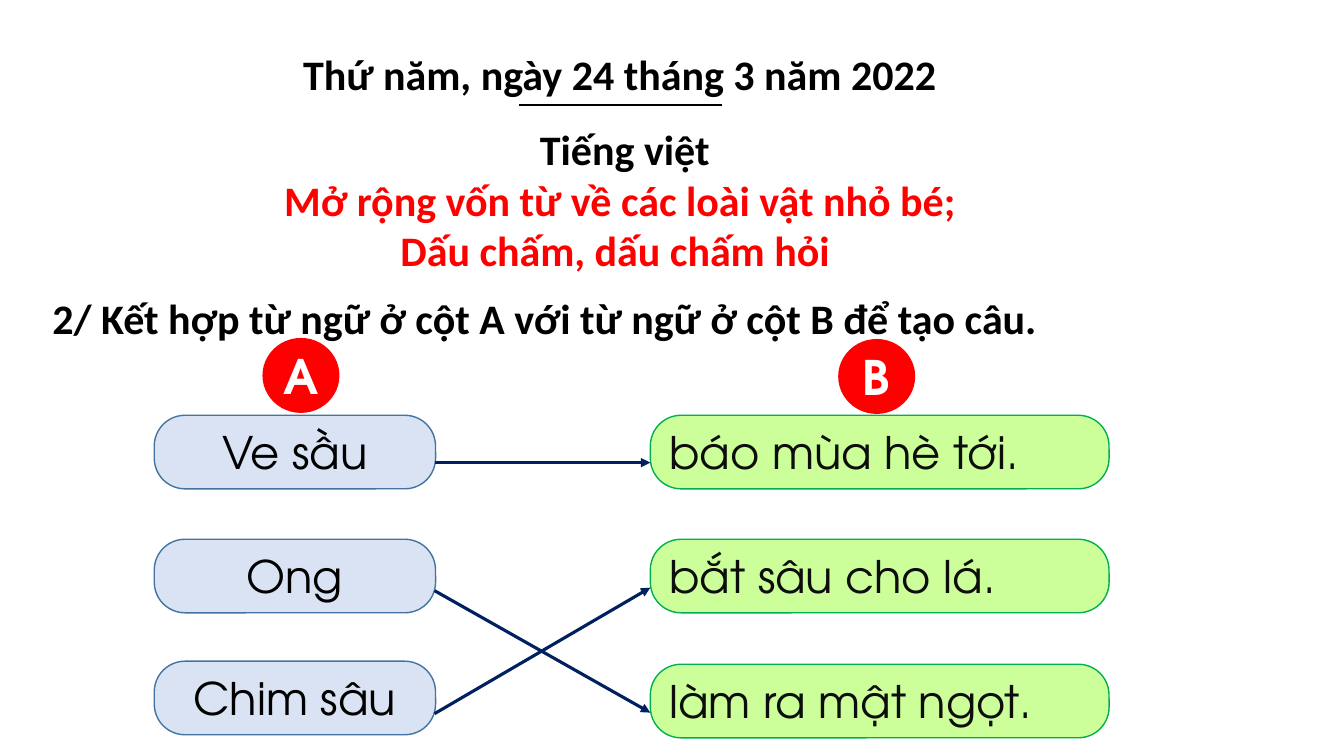
"""Build a Vietnamese lesson slide that matches words of column A with column B."""
from dataclasses import dataclass

from pptx import Presentation
from pptx import util as u
from pptx.dml.color import RGBColor
from pptx.enum import shapes, text
from pptx.oxml import parse_xml
from pptx.oxml.ns import nsdecls

PX = 9144
BLACK = RGBColor(0x00, 0x00, 0x00)
INK = RGBColor(0x0D, 0x0D, 0x0D)
WHITE = RGBColor(0xFF, 0xFF, 0xFF)
RED = RGBColor(0xFF, 0x00, 0x00)
NAVY = RGBColor(0x00, 0x20, 0x60)
PALE_BLUE = RGBColor(0xDA, 0xE3, 0xF3)
STEEL = RGBColor(0x43, 0x73, 0x9E)
LIME = RGBColor(0xCC, 0xFF, 0x99)
GREEN = RGBColor(0x00, 0xB0, 0x50)
HEAD_FONT = "Calibri"
CARD_FONT = "TeX Gyre Adventor"
OVAL = shapes.MSO_SHAPE.OVAL
ROUNDED = shapes.MSO_SHAPE.ROUNDED_RECTANGLE
LEFT, CENTER = text.PP_ALIGN.LEFT, text.PP_ALIGN.CENTER


@dataclass(frozen=True)
class Style:
    kind: int
    left: int
    width: int
    fill: RGBColor
    line: RGBColor
    color: RGBColor
    size: int
    align: int
    bold: bool = False


@dataclass(frozen=True)
class Heading:
    words: str
    color: RGBColor
    spacing: float


@dataclass(frozen=True)
class Link:
    x1: int
    y1: int
    x2: int
    y2: int
    color: RGBColor
    width: float
    arrow: bool


COLUMN_A = Style(ROUNDED, 153, 279, PALE_BLUE, STEEL, BLACK, 32, CENTER)
COLUMN_B = Style(ROUNDED, 645, 455, LIME, GREEN, INK, 32, LEFT)
BADGE_A = Style(OVAL, 261, 75, RED, RED, WHITE, 34, CENTER, True)
BADGE_B = Style(OVAL, 832, 75, RED, RED, WHITE, 34, CENTER, True)
CARD_HEIGHT = 73

HEADINGS = [
    Heading("Thứ năm, ngày 24 tháng 3 năm 2022", BLACK, 1.5),
    Heading(" Tiếng việt", BLACK, 1.5),
    Heading("Mở rộng vốn từ về các loài vật nhỏ bé;", RED, 1.0),
    Heading("Dấu chấm, dấu chấm hỏi ", RED, 1.0),
]
TASK = "2/ Kết hợp từ ngữ ở cột A với từ ngữ ở cột B để tạo câu."
CARDS = [
    (COLUMN_A, 412, "Ve sầu"),
    (COLUMN_A, 535, "Ong"),
    (COLUMN_A, 656, "Chim sâu"),
    (COLUMN_B, 412, "báo mùa hè tới."),
    (COLUMN_B, 535, "bắt sâu cho lá."),
    (COLUMN_B, 659, "làm ra mật ngọt."),
    (BADGE_A, 336, "A"),
    (BADGE_B, 337, "B"),
]
LINKS = [
    Link(515, 104, 716, 104, BLACK, 1.5, False),
    Link(431, 459, 645, 459, NAVY, 2.25, True),
    Link(431, 586, 645, 707, NAVY, 2.25, True),
    Link(431, 708, 645, 583, NAVY, 2.25, True),
]


def px(n: int) -> u.Emu:
    """Turn px into EMU."""
    return u.Emu(n * PX)


def format_runs(p, font: str, size: int, color: RGBColor, bold: bool) -> None:
    """Format every run of a paragraph."""
    for r in p.runs:
        r.font.name = font
        r.font.size = u.Pt(size)
        r.font.color.rgb = color
        r.font.bold = bold


def fill_headings(sp) -> None:
    """Place the subtitle placeholder and write the centred headings."""
    sp.left, sp.top, sp.width, sp.height = px(115), px(18), px(1000), px(181)
    tf = sp.text_frame
    tf.auto_size = text.MSO_AUTO_SIZE.NONE
    tf.vertical_anchor = text.MSO_ANCHOR.TOP
    tf.text = "\n".join(h.words for h in HEADINGS)
    for p, h in zip(tf.paragraphs, HEADINGS):
        p.alignment = CENTER
        p.line_spacing = h.spacing
        p.space_before = u.Pt(0)
        format_runs(p, HEAD_FONT, 30, h.color, True)


def add_task(s) -> None:
    """Add the task line."""
    tf = s.shapes.add_textbox(px(42), px(285), px(1249), px(93)).text_frame
    tf.word_wrap = True
    tf.text = TASK
    format_runs(tf.paragraphs[0], HEAD_FONT, 30, BLACK, True)


def add_card(s, style: Style, top: int, words: str) -> None:
    """Add one word card or column badge."""
    sp = s.shapes.add_shape(
        style.kind, px(style.left), px(top), px(style.width), px(CARD_HEIGHT))
    sp.shadow.inherit = False
    sp.fill.solid()
    sp.fill.fore_color.rgb = style.fill
    sp.line.color.rgb = style.line
    sp.line.width = u.Pt(1)
    tf = sp.text_frame
    if style.kind == ROUNDED:
        sp.adjustments[0] = 0.417
    else:
        tf.margin_left = tf.margin_right = 0
    tf.word_wrap = style.kind == ROUNDED
    tf.vertical_anchor = text.MSO_ANCHOR.MIDDLE
    tf.text = words
    p = tf.paragraphs[0]
    p.alignment = style.align
    format_runs(p, CARD_FONT, style.size, style.color, style.bold)


def add_link(s, link: Link) -> None:
    """Add a straight line, with an arrowhead if asked."""
    cx = s.shapes.add_connector(
        shapes.MSO_CONNECTOR.STRAIGHT,
        px(link.x1), px(link.y1), px(link.x2), px(link.y2))
    cx.line.color.rgb = link.color
    cx.line.width = u.Pt(link.width)
    if link.arrow:
        cx.line._get_or_add_ln().append(
            parse_xml(f'<a:tailEnd {nsdecls("a")} type="triangle"/>'))
    cx._element.spPr.append(parse_xml(f'<a:effectLst {nsdecls("a")}/>'))


def main() -> None:
    """Build and save the slide."""
    prs = Presentation()
    prs.slide_width, prs.slide_height = px(1333), px(750)
    s = prs.slides.add_slide(prs.slide_layouts[0])
    title = s.shapes.title._element
    title.getparent().remove(title)
    fill_headings(s.placeholders[1])
    add_task(s)
    for style, top, words in CARDS:
        add_card(s, style, top, words)
    for link in LINKS:
        add_link(s, link)
    prs.save("out.pptx")


if __name__ == "__main__":
    main()
